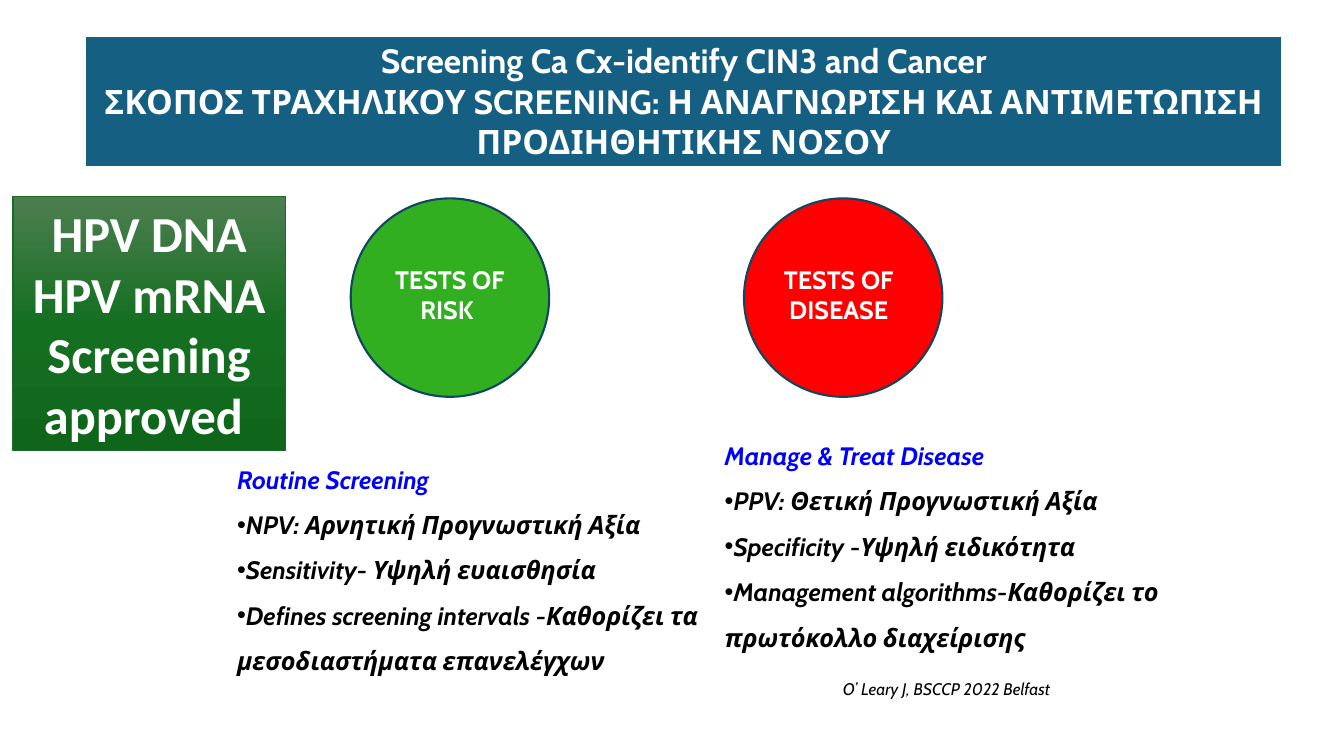
import pptx
import pptx.util
import pptx.dml.color
import pptx.enum.shapes
import pptx.enum.text
import pptx.oxml
import pptx.oxml.ns

Cm, Pt = pptx.util.Cm, pptx.util.Pt
SHAPES = pptx.enum.shapes.MSO_SHAPE
ALIGN = pptx.enum.text.PP_ALIGN
ANCHOR = pptx.enum.text.MSO_ANCHOR

COLORS = {
    "white": "FFFFFF", "black": "000000", "banner": "156082", "heading": "0000FF",
    "risk": "32AF21", "disease": "FF0000", "ring": "104760", "badge line": "196B24",
    "badge top": "4D7E50", "badge middle": "156F21", "badge bottom": "0F661B",
}


class ScreeningPage:
    """Hold the style and the current page, and draw each kind of element."""

    def __init__(self, deck):
        self.page = deck.slides.add_slide(deck.slide_layouts[3])
        self.frame_format = {"word_wrap": True, "auto_size": pptx.enum.text.MSO_AUTO_SIZE.NONE}
        self.font_format = {"name": "Cabin", "bold": True, "italic": False}

    def color(self, name):
        return pptx.dml.color.RGBColor.from_string(COLORS[name])

    def place(self, box, area):
        for side, length in zip(("left", "top", "width", "height"), area):
            setattr(box, side, Cm(length))

    def outline(self, box, color, width):
        box.line.color.rgb = self.color(color)
        box.line.width = Pt(width)

    def paint(self, box, fill, line, width):
        box.fill.solid()
        box.fill.fore_color.rgb = self.color(fill)
        self.outline(box, line, width)

    def set_text(self, box, lines, size, color="white", align=ALIGN.CENTER,
                 anchor=ANCHOR.TOP, **font_format):
        frame = box.text_frame
        for key, value in {**self.frame_format, "vertical_anchor": anchor}.items():
            setattr(frame, key, value)
        for index, line in enumerate(lines):
            para = frame.paragraphs[0] if index == 0 else frame.add_paragraph()
            para.alignment = align
            span = para.add_run()
            span.text = line
            for key, value in {**self.font_format, "size": Pt(size), **font_format}.items():
                setattr(span.font, key, value)
            span.font.color.rgb = self.color(color)

    def title(self, area, lines):
        box = self.page.shapes.title
        self.place(box, area)
        self.paint(box, "banner", "white", 2)
        self.set_text(box, lines, 24)

    def bullets(self, slot, area, heading, items):
        box = self.page.placeholders[slot]
        self.place(box, area)
        self.set_text(box, [heading, *items], 18, "black", ALIGN.LEFT, italic=True)
        for index, para in enumerate(box.text_frame.paragraphs):
            para.line_spacing = 1.5
            para.space_before = Pt(0)
            props = para._p.get_or_add_pPr()
            props.set("marL", "0")
            props.set("indent", "0")
            mark = '<a:buChar {} char="•"/>' if index else "<a:buNone {}/>"
            props.append(pptx.oxml.parse_xml(mark.format(pptx.oxml.ns.nsdecls("a"))))
        box.text_frame.paragraphs[0].runs[0].font.color.rgb = self.color("heading")

    def shape(self, kind, area):
        box = self.page.shapes.add_shape(kind, *map(Cm, area))
        box.shadow.inherit = False
        return box

    def text(self, area, line, size, **options):
        box = self.page.shapes.add_textbox(*map(Cm, area))
        self.set_text(box, [line], size, **options)

    def circle(self, left, label_left, fill, label):
        ring = self.shape(SHAPES.OVAL, (left, 5, 5, 5))
        self.paint(ring, fill, "ring", 1.5)
        self.text((label_left, 6.53, 3.61, 1.8), label, 18)

    def badge(self, area, lines):
        box = self.shape(SHAPES.RECTANGLE, area)
        box.fill.gradient()
        box.fill.gradient_angle = 270
        stops = box._element.spPr.find(".//" + pptx.oxml.ns.qn("a:gsLst"))
        for stop in list(stops):
            stops.remove(stop)
        for index, name in enumerate(("badge top", "badge middle", "badge bottom")):
            stops.append(pptx.oxml.parse_xml(
                f'<a:gs {pptx.oxml.ns.nsdecls("a")} pos="{index * 50000}">'
                f'<a:srgbClr val="{COLORS[name]}"/></a:gs>'))
        self.outline(box, "badge line", 1)
        self.set_text(box, lines, 36, anchor=ANCHOR.MIDDLE, name="Calibri")


def main():
    deck = pptx.Presentation()
    deck.slide_width, deck.slide_height = Cm(33.87), Cm(19.05)
    page = ScreeningPage(deck)
    page.title((2.13, 0.89, 30.2, 3.33), [
        "Screening Ca Cx-identify CIN3 and Cancer",
        "ΣΚΟΠΟΣ ΤΡΑΧΗΛΙΚΟΥ SCREENING: Η ΑΝΑΓΝΩΡΙΣΗ ΚΑΙ ΑΝΤΙΜΕΤΩΠΙΣΗ ΠΡΟΔΙΗΘΗΤΙΚΗΣ ΝΟΣΟΥ"])
    page.circle(8.84, 9.53, "risk", "TESTS OF RISK ")
    page.circle(18.75, 19.33, "disease", "TESTS OF DISEASE")
    page.bullets(1, (5.72, 11.18, 12.29, 6.81), "Routine Screening", [
        "NPV: Αρνητική Προγνωστική Αξία",
        "Sensitivity- Υψηλή ευαισθησία",
        "Defines screening intervals -Καθορίζει τα μεσοδιαστήματα επανελέγχων"])
    page.bullets(2, (18.01, 10.59, 13.72, 6.81), "Manage & Treat Disease", [
        "PPV: Θετική Προγνωστική Αξία",
        "Specificity -Υψηλή ειδικότητα",
        "Management algorithms-Καθορίζει το πρωτόκολλο διαχείρισης"])
    page.text((14.73, 16.99, 11.99, 0.76), "O’ Leary J, BSCCP 2022 Belfast", 12,
              color="black", align=ALIGN.RIGHT, bold=False, italic=True)
    page.badge((0.33, 4.95, 6.86, 6.4), ["HPV DNA HPV mRNA", "Screening approved "])
    deck.save("out.pptx")


if __name__ == "__main__":
    main()
